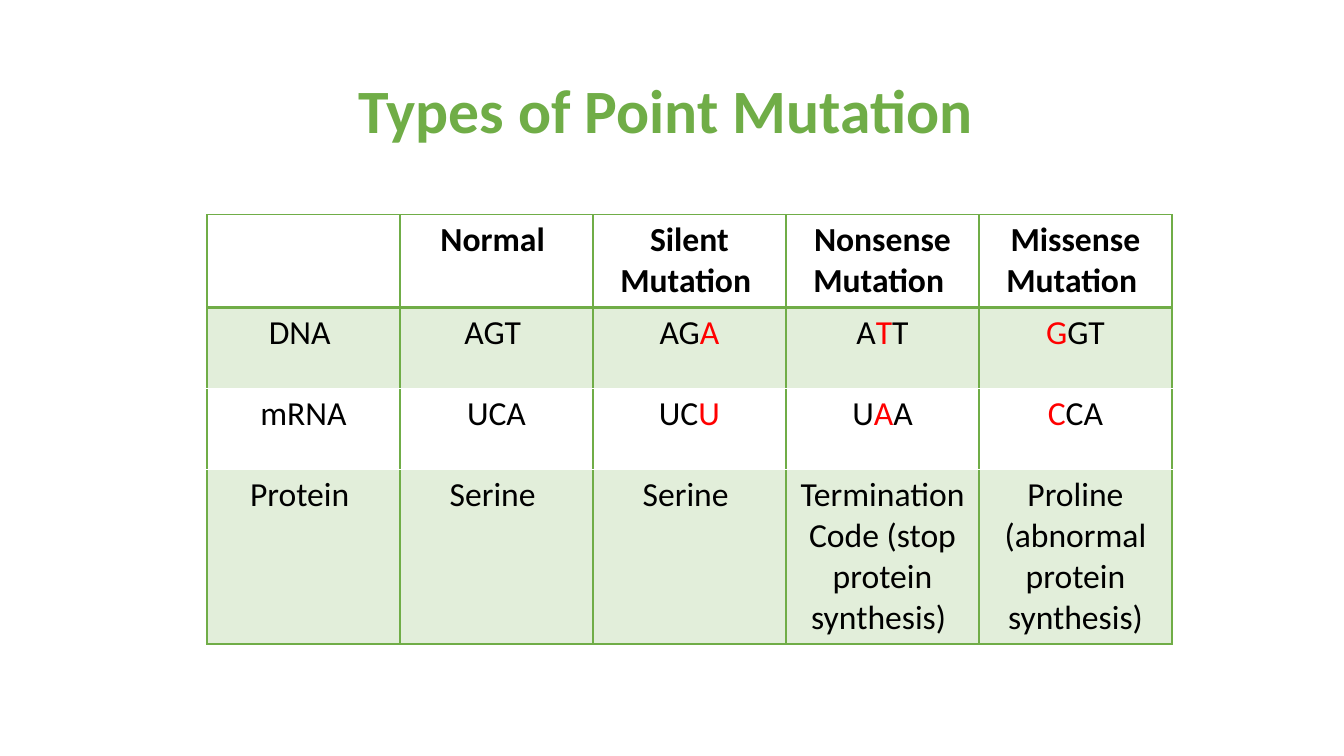
from lxml import etree
from pptx import Presentation
from pptx import util as u
from pptx.dml.color import RGBColor
from pptx.enum import text
from pptx.oxml.ns import qn

WIDTH, HEIGHT = 13.33, 7.5

# Letters between bars are the mutated bases
MUTATIONS = [
    ["", "Normal ", "Silent Mutation ", "Nonsense Mutation ", "Missense Mutation "],
    ["DNA ", "AGT ", "AG|A|", "A|T|T", "|G|GT"],
    ["mRNA", "UCA", "UC|U|", "U|A|A", "|C|CA"],
    ["Protein ", "Serine ", "Serine ", "Termination Code (stop protein synthesis) ",
     "Proline (abnormal protein synthesis)"],
]
ROW_SHARES = [0.123, 0.107, 0.107, 0.231]


def rgb(code):
    return RGBColor.from_string(code)


def write(tf, content, size=24, color="000000", accent="FF0000", bold=False, spacing=None):
    """Write one centred paragraph; parts between bars take the accent colour."""
    p = tf.paragraphs[0]
    p.alignment = text.PP_ALIGN.CENTER
    p.line_spacing = spacing
    p.font.size = u.Pt(size)
    for i, part in enumerate(content.split("|")):
        if part:
            r = p.add_run()
            r.text = part
            r.font.name = "Calibri"
            r.font.size = u.Pt(size)
            r.font.bold = bold
            r.font.color.rgb = rgb(accent if i % 2 else color)


class Deck:
    green = "70AD47"
    band_alpha = 20

    def __init__(self, prs):
        self.prs = prs
        self.s = prs.slides.add_slide(prs.slide_layouts[6])

    def box(self, x, y, w, h):
        """Turn shares of the slide's size into lengths."""
        sw, sh = self.prs.slide_width, self.prs.slide_height
        return [u.Emu(round(v)) for v in (x * sw, y * sh, w * sw, h * sh)]

    def title(self, content, *area):
        tf = self.s.shapes.add_textbox(*self.box(*area)).text_frame
        tf.word_wrap = True
        tf.vertical_anchor = text.MSO_ANCHOR.MIDDLE
        write(tf, content, size=44, color=self.green, bold=True, spacing=0.9)

    def border(self, cell, side, points):
        tcPr = cell._tc.get_or_add_tcPr()
        ln = etree.SubElement(tcPr, qn("a:ln" + side), w=str(u.Pt(points)))
        fill = etree.SubElement(ln, qn("a:solidFill"))
        etree.SubElement(fill, qn("a:srgbClr"), val=self.green)

    def fill(self, cell, banded):
        if not banded:
            cell.fill.background()
            return
        cell.fill.solid()
        cell.fill.fore_color.rgb = rgb(self.green)
        clr = cell._tc.tcPr.find(".//" + qn("a:solidFill") + "/" + qn("a:srgbClr"))
        for clr in cell._tc.tcPr.find(qn("a:solidFill")):
            etree.SubElement(clr, qn("a:alpha"), val=str(self.band_alpha * 1000))

    def table(self, rows, x, y, w, row_shares):
        area = self.box(x, y, w, sum(row_shares))
        table = self.s.shapes.add_table(len(rows), len(rows[0]), *area).table
        table.first_row = table.horz_banding = False
        for row, share in zip(table.rows, row_shares):
            row.height = self.box(0, 0, 0, share)[3]
        for i, row in enumerate(rows):
            for j, content in enumerate(row):
                cell = table.cell(i, j)
                header = i == 0
                write(cell.text_frame, content, bold=header)
                for side in "LRTB" if header else "LRB":
                    self.border(cell, side, 2 if header and side == "B" else 1)
                self.fill(cell, banded=i % 2 == 1)


def main():
    prs = Presentation()
    prs.slide_width, prs.slide_height = u.Inches(WIDTH), u.Inches(HEIGHT)
    deck = Deck(prs)
    deck.title("Types of Point Mutation ", 0.069, 0.053, 0.863, 0.193)
    deck.table(MUTATIONS, 0.154, 0.284, 0.718, ROW_SHARES)
    prs.save("out.pptx")


if __name__ == "__main__":
    main()
